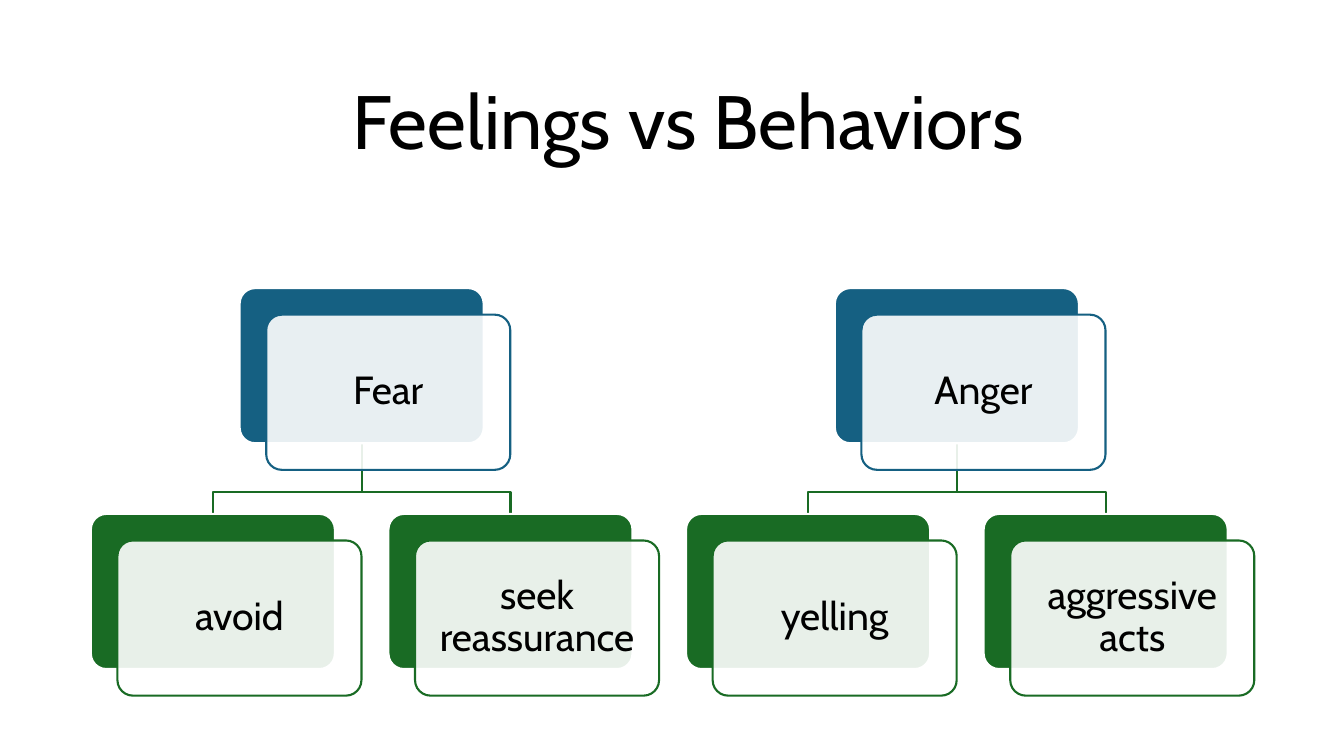
from pptx import Presentation
from pptx.dml.color import RGBColor
from pptx.enum.shapes import MSO_SHAPE as Shape
from pptx.enum.text import MSO_ANCHOR as Anchor, MSO_AUTO_SIZE as AutoSize, PP_ALIGN as Align
from pptx.oxml.ns import qn
from pptx.util import Cm, Pt
from lxml.etree import SubElement

BLUE = RGBColor(0x15, 0x60, 0x82)
GREEN = RGBColor(0x19, 0x6B, 0x24)
WHITE = RGBColor(0xFF, 0xFF, 0xFF)
BLACK = RGBColor(0, 0, 0)
FONT = "Cabin"

CARD_WIDTH, CARD_HEIGHT = 6.15, 3.91
FIRST_LEFT, COLUMN_STEP = 2.29, 7.5
FEELING_TOP, BRANCH_Y, BEHAVIOR_TOP = 7.26, 12.4, 12.95
FRONT_OFFSET = 0.67

FEELINGS = [
    ("Fear", ["avoid", "seek reassurance"]),
    ("Anger", ["yelling", "aggressive acts"]),
]


def column_left(column):
    return FIRST_LEFT + column * COLUMN_STEP


def write_text(shape, text, size):
    frame = shape.text_frame
    frame.text = text
    frame.word_wrap = True
    frame.auto_size = AutoSize.NONE
    frame.vertical_anchor = Anchor.MIDDLE
    paragraph = frame.paragraphs[0]
    paragraph.alignment = Align.CENTER
    paragraph.line_spacing = 0.9
    font = paragraph.runs[0].font
    font.name = FONT
    font.size = Pt(size)
    font.color.rgb = BLACK


def add_title(slide, text):
    title = slide.shapes.title
    title.left, title.top = Cm(3.84), Cm(0.97)
    title.width, title.height = Cm(27), Cm(4.37)
    write_text(title, text, 54)


def add_panel(slide, left, top, fill_color, line_color):
    panel = slide.shapes.add_shape(
        Shape.ROUNDED_RECTANGLE, Cm(left), Cm(top), Cm(CARD_WIDTH), Cm(CARD_HEIGHT))
    panel.adjustments[0] = 0.1
    panel.shadow.inherit = False
    panel.fill.solid()
    panel.fill.fore_color.rgb = fill_color
    panel.line.color.rgb = line_color
    panel.line.width = Pt(1.5)
    return panel


def set_opacity(shape, percent):
    color = shape.fill._xPr.find(qn("a:solidFill"))[0]
    SubElement(color, qn("a:alpha")).set("val", str(percent * 1000))


def add_card(slide, text, column, top, color):
    left = column_left(column)
    add_panel(slide, left, top, color, WHITE)
    front = add_panel(slide, left + FRONT_OFFSET, top + FRONT_OFFSET, WHITE, color)
    set_opacity(front, 90)
    write_text(front, text, 28)
    frame = front.text_frame
    frame.margin_left = frame.margin_right = Cm(0.3)
    frame.margin_top = frame.margin_bottom = Cm(0.3)


def add_branch(slide, feeling_column, behavior_column):
    start_x, end_x = (
        Cm(column_left(column) + CARD_WIDTH / 2)
        for column in (feeling_column, behavior_column))
    builder = slide.shapes.build_freeform(start_x, Cm(FEELING_TOP + CARD_HEIGHT))
    builder.add_line_segments(
        [(start_x, Cm(BRANCH_Y)), (end_x, Cm(BRANCH_Y)), (end_x, Cm(BEHAVIOR_TOP))],
        close=False)
    branch = builder.convert_to_shape()
    branch.shadow.inherit = False
    branch.fill.background()
    branch.line.color.rgb = GREEN
    branch.line.width = Pt(1.5)


def add_feeling(slide, feeling, behaviors, first_column):
    feeling_column = first_column + (len(behaviors) - 1) / 2
    for column in range(first_column, first_column + len(behaviors)):
        add_branch(slide, feeling_column, column)
    add_card(slide, feeling, feeling_column, FEELING_TOP, BLUE)
    for column, behavior in enumerate(behaviors, first_column):
        add_card(slide, behavior, column, BEHAVIOR_TOP, GREEN)


def main():
    presentation = Presentation()
    presentation.slide_width, presentation.slide_height = Cm(33.87), Cm(19.05)
    slide = presentation.slides.add_slide(presentation.slide_layouts[5])
    add_title(slide, "Feelings vs Behaviors")
    first_column = 0
    for feeling, behaviors in FEELINGS:
        add_feeling(slide, feeling, behaviors, first_column)
        first_column += len(behaviors)
    presentation.save("out.pptx")


if __name__ == "__main__":
    main()
